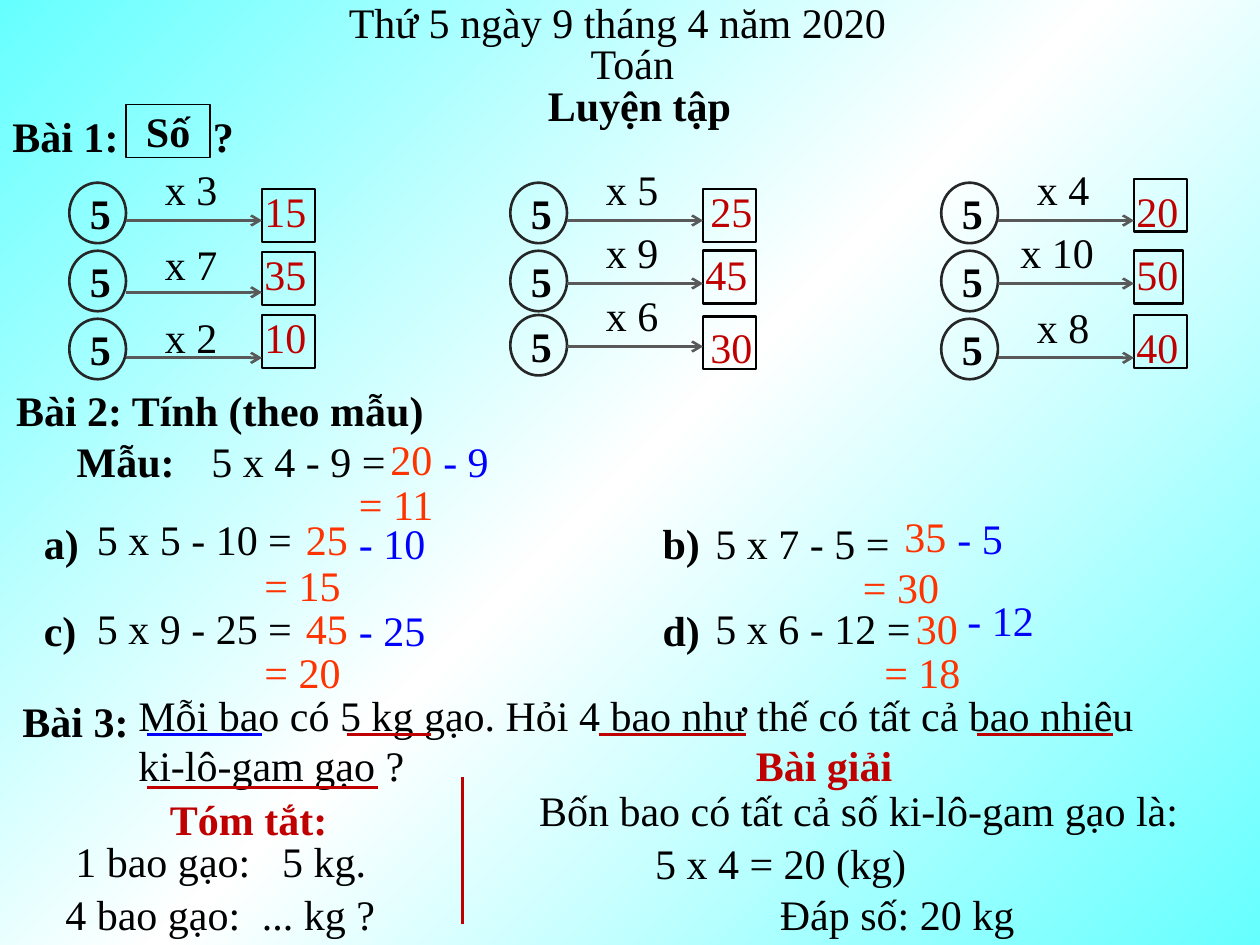
import copy

import pptx
import pptx.dml.color
import pptx.enum.shapes
import pptx.enum.text
import pptx.oxml.ns
import pptx.util
from lxml import etree

RGB = pptx.dml.color.RGBColor
SHAPE = pptx.enum.shapes.MSO_SHAPE
ALIGN = pptx.enum.text.PP_ALIGN
qn = pptx.oxml.ns.qn

BLACK = RGB(0x00, 0x00, 0x00)
WHITE = RGB(0xFF, 0xFF, 0xFF)
CYAN = RGB(0x66, 0xFF, 0xFF)
RED = RGB(0xC0, 0x00, 0x00)
ORANGE = RGB(0xFF, 0x33, 0x00)
BLUE = RGB(0x00, 0x00, 0xFF)
CHARCOAL = RGB(0x26, 0x26, 0x26)
GREY = RGB(0x59, 0x59, 0x59)


class Board:
    """Draws lesson elements on one slide, with lengths at 100 px to the inch."""

    EMU_PER_PX = 9144
    FONT = "Times New Roman"
    SIZE = pptx.util.Pt(24)

    def __init__(self, prs):
        self.s = prs.slides.add_slide(prs.slide_layouts[6])

    def emu(self, *lengths):
        return [pptx.util.Emu(n * self.EMU_PER_PX) for n in lengths]

    def background(self, *colors):
        fill = self.s.background.fill
        fill.gradient()
        fill.gradient_angle = 315
        stops = next(self.s.element.iter(qn("a:gsLst")))
        stops.append(copy.deepcopy(stops[0]))
        for i, (stop, color) in enumerate(zip(fill.gradient_stops, colors)):
            stop.position = i / (len(colors) - 1)
            stop.color.rgb = color

    def set_text(self, tf, text, color=BLACK, bold=False, align=ALIGN.LEFT):
        tf.text = text
        p = tf.paragraphs[0]
        p.alignment = align
        for r in p.runs:
            r.font.name = self.FONT
            r.font.size = self.SIZE
            r.font.bold = bold
            r.font.color.rgb = color
        return p

    def text(self, x, y, w, text, color=BLACK, bold=False, wrap=True,
             align=ALIGN.LEFT, h=50, tab=None):
        tf = self.s.shapes.add_textbox(*self.emu(x, y, w, h)).text_frame
        tf.word_wrap = wrap
        tf.auto_size = pptx.enum.text.MSO_AUTO_SIZE.SHAPE_TO_FIT_TEXT
        p = self.set_text(tf, text, color, bold, align)
        if tab:
            tabs = etree.SubElement(p._p.get_or_add_pPr(), qn("a:tabLst"))
            etree.SubElement(tabs, qn("a:tab"), pos=str(self.emu(tab)[0]), algn="l")

    def shape(self, kind, x, y, w, h, color=BLACK, width=1.5, text=None):
        sp = self.s.shapes.add_shape(kind, *self.emu(x, y, w, h))
        sp.shadow.inherit = False
        sp.fill.background()
        sp.line.color.rgb = color
        sp.line.width = pptx.util.Pt(width)
        if text:
            sp.text_frame.vertical_anchor = pptx.enum.text.MSO_ANCHOR.MIDDLE
            self.set_text(sp.text_frame, text, bold=True, align=ALIGN.CENTER)

    def line(self, x1, y1, x2, y2, color=RED, arrow=False):
        straight = pptx.enum.shapes.MSO_CONNECTOR.STRAIGHT
        cxn = self.s.shapes.add_connector(straight, *self.emu(x1, y1, x2, y2))
        cxn.line.color.rgb = color
        cxn.line.width = pptx.util.Pt(1.5)
        props = cxn._element.spPr
        if arrow:
            etree.SubElement(props.find(qn("a:ln")), qn("a:tailEnd"), type="arrow")
        etree.SubElement(props, qn("a:effectLst"))

    def product(self, x, oval_y, factor, factor_y, arrow_y, box_y,
                answer, answer_y, answer_dx=145, factor_dx=66, box_w=42):
        self.shape(SHAPE.OVAL, x, oval_y, 45, 48, CHARCOAL, text="5")
        self.shape(SHAPE.RECTANGLE, x + 153, box_y, box_w, 42)
        self.line(x + 45, arrow_y, x + 153, arrow_y, GREY, arrow=True)
        self.text(x + factor_dx, factor_y, 79, factor)
        self.text(x + answer_dx, answer_y, 54, answer, RED)


def heading(board):
    board.text(459, 25, 87, "Toán", wrap=False)
    board.text(267, -8, 450, "Thứ 5 ngày 9 tháng 4 năm 2020", wrap=False)
    board.text(425, 58, 167, "Luyện tập", bold=True, wrap=False)


def exercise_1(board):
    board.text(0, 83, 209, "Bài 1:\t?", bold=True, tab=159)
    board.shape(SHAPE.RECTANGLE, 100, 83, 67, 42, width=1, text="Số")
    board.product(55, 145, "x 3", 125, 175, 150, "15", 142)
    board.product(55, 199, "x 7", 184, 232, 200, "35", 192)
    board.product(55, 253, "x 2", 242, 284, 250, "10", 242)
    board.product(405, 145, "x 5", 125, 175, 150, "25", 142, answer_dx=149)
    board.product(405, 199, "x 9", 175, 225, 199, "45", 192)
    board.product(405, 250, "x 6", 225, 275, 251, "30", 250, answer_dx=149)
    board.product(747, 145, "x 4", 125, 175, 142, "20", 142)
    board.product(747, 199, "x 10", 175, 225, 199, "50", 192, factor_dx=53, box_w=39)
    board.product(747, 253, "x 8", 234, 284, 250, "40", 250)


def exercise_2(board):
    board.text(3, 300, 347, "Bài 2: Tính (theo mẫu)", bold=True, wrap=False)
    labels = [(51, 341, 99, "Mẫu:"), (25, 406, 49, "a)"), (25, 475, 47, "c)"),
              (516, 406, 51, "b)"), (516, 475, 51, "d)")]
    for x, y, w, label in labels:
        board.text(x, y, w, label, bold=True, wrap=False)
    sums = [
        [(158, 341, "5 x 4 - 9 ="), (300, 339, "20"), (342, 341, "- 9"), (275, 375, "= 11")],
        [(67, 403, "5 x 5 - 10 ="), (233, 403, "25"), (275, 406, "- 10"), (200, 439, "= 15")],
        [(67, 473, "5 x 9 - 25 ="), (233, 473, "45"), (275, 475, "- 25"), (200, 508, "= 20")],
        [(558, 406, "5 x 7 - 5 ="), (708, 400, "35"), (750, 402, "- 5"), (675, 441, "= 30")],
        [(558, 473, "5 x 6 - 12 ="), (717, 473, "30"), (758, 467, "- 12"), (692, 508, "= 18")],
    ]
    styles = [(200, BLACK), (67, ORANGE), (90, BLUE), (95, ORANGE)]
    for parts in sums:
        for (x, y, text), (w, color) in zip(parts, styles):
            board.text(x, y, w, text, color)


def exercise_3(board):
    board.text(8, 547, 106, "Bài 3:", bold=True, wrap=False)
    board.text(100, 542, 850, "Mỗi bao có 5 kg gạo. Hỏi 4 bao như thế có tất cả "
               "bao nhiêu ki-lô-gam gạo ?", h=91)
    board.line(117, 583, 208, 583, BLUE)
    for x1, x2, y in [(275, 342, 583), (475, 592, 583), (775, 883, 583), (117, 300, 625)]:
        board.line(x1, y, x2, y)
    board.line(367, 617, 367, 733)
    board.text(125, 625, 146, "Tóm tắt:", RED, bold=True, wrap=False)
    board.text(50, 658, 266, "1 bao gạo:\t5 kg.", tab=164)
    board.text(42, 700, 283, "4 bao gạo:\t... kg ?", tab=156)
    board.text(583, 582, 142, "Bài giải", RED, bold=True, align=ALIGN.CENTER)
    board.text(418, 618, 532, "Bốn bao có tất cả số ki-lô-gam gạo là:", wrap=False)
    board.text(510, 660, 221, "5 x 4 = 20 (kg)", wrap=False)
    board.text(583, 700, 258, "Đáp số: 20 kg", align=ALIGN.CENTER)


def main():
    prs = pptx.Presentation()
    prs.slide_width = pptx.util.Inches(10)
    prs.slide_height = pptx.util.Inches(7.5)
    board = Board(prs)
    board.background(CYAN, WHITE, CYAN)
    heading(board)
    exercise_3(board)
    exercise_2(board)
    exercise_1(board)
    prs.save("out.pptx")


if __name__ == "__main__":
    main()
